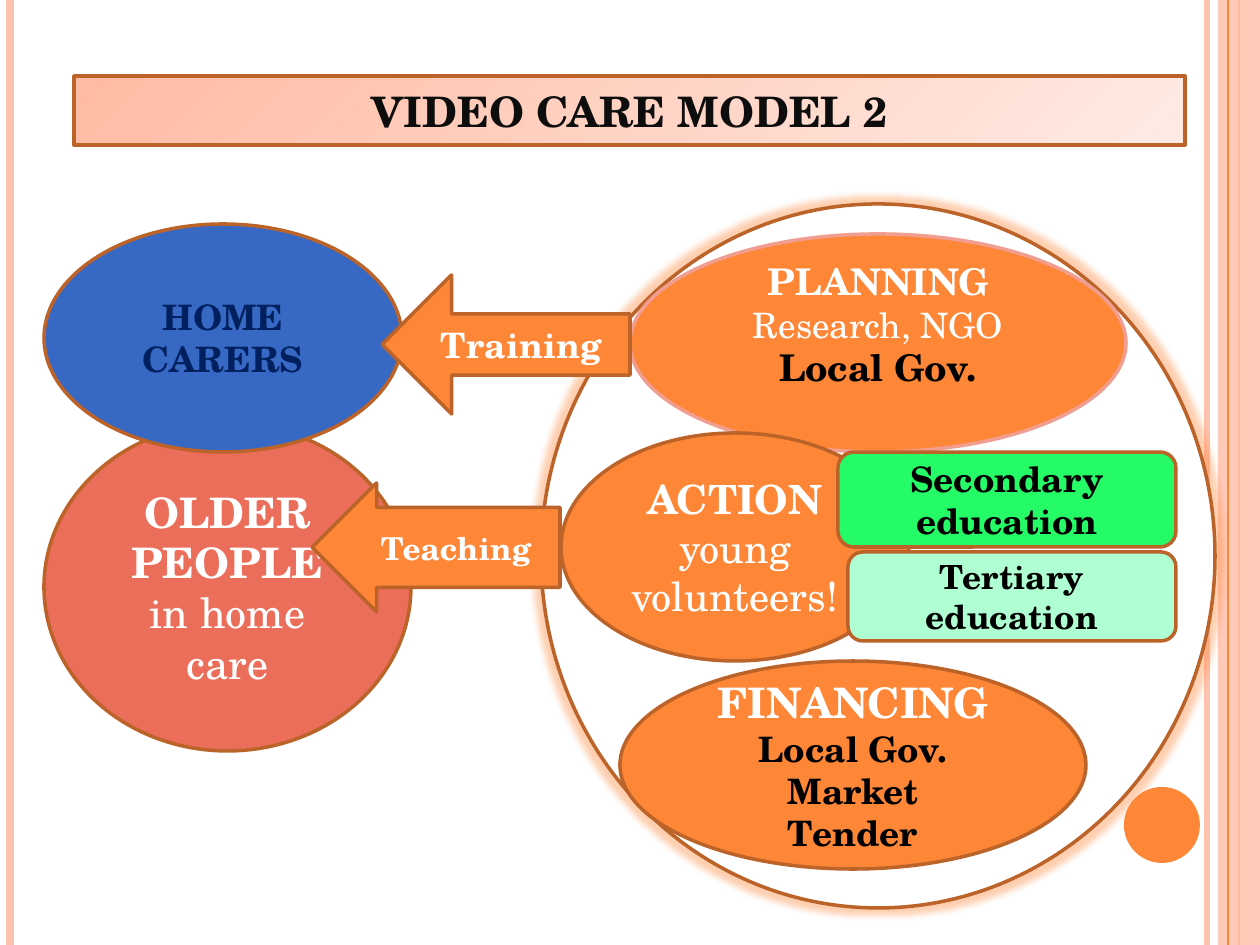
from dataclasses import dataclass

from lxml import etree
from pptx import Presentation
from pptx.dml.color import RGBColor
from pptx.enum.shapes import MSO_CONNECTOR, MSO_SHAPE
from pptx.enum.text import MSO_ANCHOR, PP_ALIGN
from pptx.oxml.ns import qn
from pptx.util import Pt

EMU_PER_PX = 914400 / 126
SLIDE_WIDTH, SLIDE_HEIGHT = 1260, 945


@dataclass(frozen=True)
class Theme:
    font: str = "TeX Gyre Schola"
    orange: str = "FE8637"
    outline: str = "BC6329"
    peach: str = "FEC3AE"
    pink: str = "F19E91"
    banner_start: str = "FFBBA3"
    banner_end: str = "FFEAE4"
    coral: str = "EB6E5A"
    blue: str = "3668C4"
    navy: str = "002060"
    green: str = "25FB67"
    mint: str = "AFFFD3"
    white: str = "FFFFFF"
    black: str = "000000"
    ink: str = "0D0D0D"
    heading: int = 24
    action: int = 23
    planning: int = 21
    body: int = 20
    small: int = 19
    label: int = 18
    border: int = 2


THEME = Theme()


@dataclass(frozen=True)
class Box:
    left: int
    top: int
    width: int
    height: int

    def inner(self, left, top, width, height):
        """Return a box whose offset is measured from this one."""
        return Box(self.left + left, self.top + top, width, height)

    def emu(self):
        return [px(n) for n in (self.left, self.top, self.width, self.height)]


@dataclass(frozen=True)
class Line:
    text: str
    size: int
    color: str = THEME.white
    bold: bool = True


def px(length):
    return round(length * EMU_PER_PX)


def rgb(color):
    return RGBColor.from_string(color)


def write_lines(shape, lines):
    frame = shape.text_frame
    frame.word_wrap = True
    frame.vertical_anchor = MSO_ANCHOR.MIDDLE
    for index, line in enumerate(lines):
        paragraph = frame.paragraphs[0] if index == 0 else frame.add_paragraph()
        paragraph.text = line.text
        paragraph.alignment = PP_ALIGN.CENTER
        font = paragraph.font
        font.name, font.size, font.bold = THEME.font, Pt(line.size), line.bold
        font.color.rgb = rgb(line.color)


def add_figure(slide, kind, box, fill, lines=(), outline=THEME.outline):
    shape = slide.shapes.add_shape(kind, *box.emu())
    shape.shadow.inherit = False
    shape.fill.solid()
    shape.fill.fore_color.rgb = rgb(fill)
    if outline:
        shape.line.color.rgb = rgb(outline)
        shape.line.width = Pt(THEME.border)
    else:
        shape.line.fill.background()
    if lines:
        write_lines(shape, lines)
    return shape


def set_alpha(color_element, percent):
    etree.SubElement(color_element, qn("a:alpha"), val=str(percent * 1000))


def add_glow(shape, color, radius, percent):
    effects = shape._element.spPr.find(qn("a:effectLst"))
    glow = etree.SubElement(effects, qn("a:glow"), rad=str(px(radius)))
    set_alpha(etree.SubElement(glow, qn("a:srgbClr"), val=color), percent)


def add_stripe(slide, box, x, color, width):
    """Draw a vertical rule over the full height of the box."""
    x = px(box.left + x)
    stripe = slide.shapes.add_connector(
        MSO_CONNECTOR.STRAIGHT, x, px(box.top), x, px(box.top + box.height))
    stripe.line.color.rgb = rgb(color)
    stripe.line.width = Pt(width)
    etree.SubElement(stripe._element.spPr, qn("a:effectLst"))


def add_frame(slide, box):
    add_stripe(slide, box, 1207, THEME.peach, 3)
    add_stripe(slide, box, 10, THEME.peach, 4.5)
    add_stripe(slide, box, 1239, THEME.orange, 1.5)
    band = add_figure(slide, MSO_SHAPE.RECTANGLE, box.inner(1218, 0, 42, box.height),
                      THEME.peach, outline=None)
    set_alpha(band._element.spPr.find(".//" + qn("a:srgbClr")), 87)
    add_stripe(slide, box, 1228, THEME.orange, 0.75)
    add_figure(slide, MSO_SHAPE.OVAL, box.inner(1124, 787, 76, 76),
               THEME.orange, outline=None)


def add_title(slide, box):
    title = slide.shapes.title
    title.left, title.top, title.width, title.height = box.emu()
    geometry = etree.SubElement(title._element.spPr, qn("a:prstGeom"),
                                prst="flowChartAlternateProcess")
    etree.SubElement(geometry, qn("a:avLst"))
    title.fill.gradient()
    title.fill.gradient_angle = 315
    for stop, color in zip(title.fill.gradient_stops,
                           (THEME.banner_start, THEME.banner_end)):
        stop.color.rgb = rgb(color)
    title.line.color.rgb = rgb(THEME.outline)
    title.line.width = Pt(THEME.border)
    write_lines(title, [Line("VIDEO CARE MODEL 2", THEME.heading, THEME.ink)])


def add_care_receivers(slide, box):
    add_figure(slide, MSO_SHAPE.OVAL, box.inner(0, 199, 367, 328), THEME.coral,
               [Line("OLDER PEOPLE", THEME.heading),
                Line("in home\vcare", THEME.heading, bold=False)])
    add_figure(slide, MSO_SHAPE.OVAL, box.inner(0, 0, 358, 228), THEME.blue,
               [Line("HOME CARERS", THEME.body, THEME.navy)])


def add_care_team(slide, box):
    circle = add_figure(slide, MSO_SHAPE.OVAL, box, THEME.white)
    add_glow(circle, THEME.orange, 13, 40)
    planning = add_figure(
        slide, MSO_SHAPE.OVAL, box.inner(89, 30, 496, 218), THEME.orange,
        [Line("PLANNING", THEME.planning),
         Line("Research, NGO", THEME.body, bold=False),
         Line("Local Gov.", THEME.planning, THEME.black)], THEME.pink)
    planning.text_frame.margin_bottom = px(44)
    add_figure(slide, MSO_SHAPE.OVAL, box.inner(20, 229, 348, 228), THEME.orange,
               [Line("ACTION", THEME.action),
                Line("young volunteers!", THEME.action, bold=False)])
    partners = [Line(text, THEME.body, THEME.black)
                for text in ("Local Gov.", "Market", "Tender")]
    add_figure(slide, MSO_SHAPE.OVAL, box.inner(79, 457, 466, 208), THEME.orange,
               [Line("FINANCING", THEME.heading), *partners])
    add_figure(slide, MSO_SHAPE.FLOWCHART_ALTERNATE_PROCESS,
               box.inner(297, 248, 338, 95), THEME.green,
               [Line("Secondary education", THEME.body, THEME.black)])
    add_figure(slide, MSO_SHAPE.ROUNDED_RECTANGLE,
               box.inner(307, 348, 328, 89), THEME.mint,
               [Line("Tertiary education", THEME.small, THEME.black)])


def add_service_arrow(slide, box, text, size, shaft):
    arrow = add_figure(slide, MSO_SHAPE.LEFT_ARROW, box, THEME.orange, [Line(text, size)])
    arrow.adjustments[0] = shaft


def main():
    presentation = Presentation()
    presentation.slide_width = px(SLIDE_WIDTH)
    presentation.slide_height = px(SLIDE_HEIGHT)
    slide = presentation.slides.add_slide(presentation.slide_layouts[5])
    add_frame(slide, Box(0, 0, SLIDE_WIDTH, SLIDE_HEIGHT))
    add_title(slide, Box(74, 76, 1111, 69))
    add_care_receivers(slide, Box(44, 224, 367, 527))
    add_care_team(slide, Box(541, 204, 674, 704))
    add_service_arrow(slide, Box(312, 483, 248, 129), "Teaching", THEME.label, 0.62)
    add_service_arrow(slide, Box(382, 275, 248, 139), "Training", THEME.body, 0.44)
    presentation.save("out.pptx")


if __name__ == "__main__":
    main()
